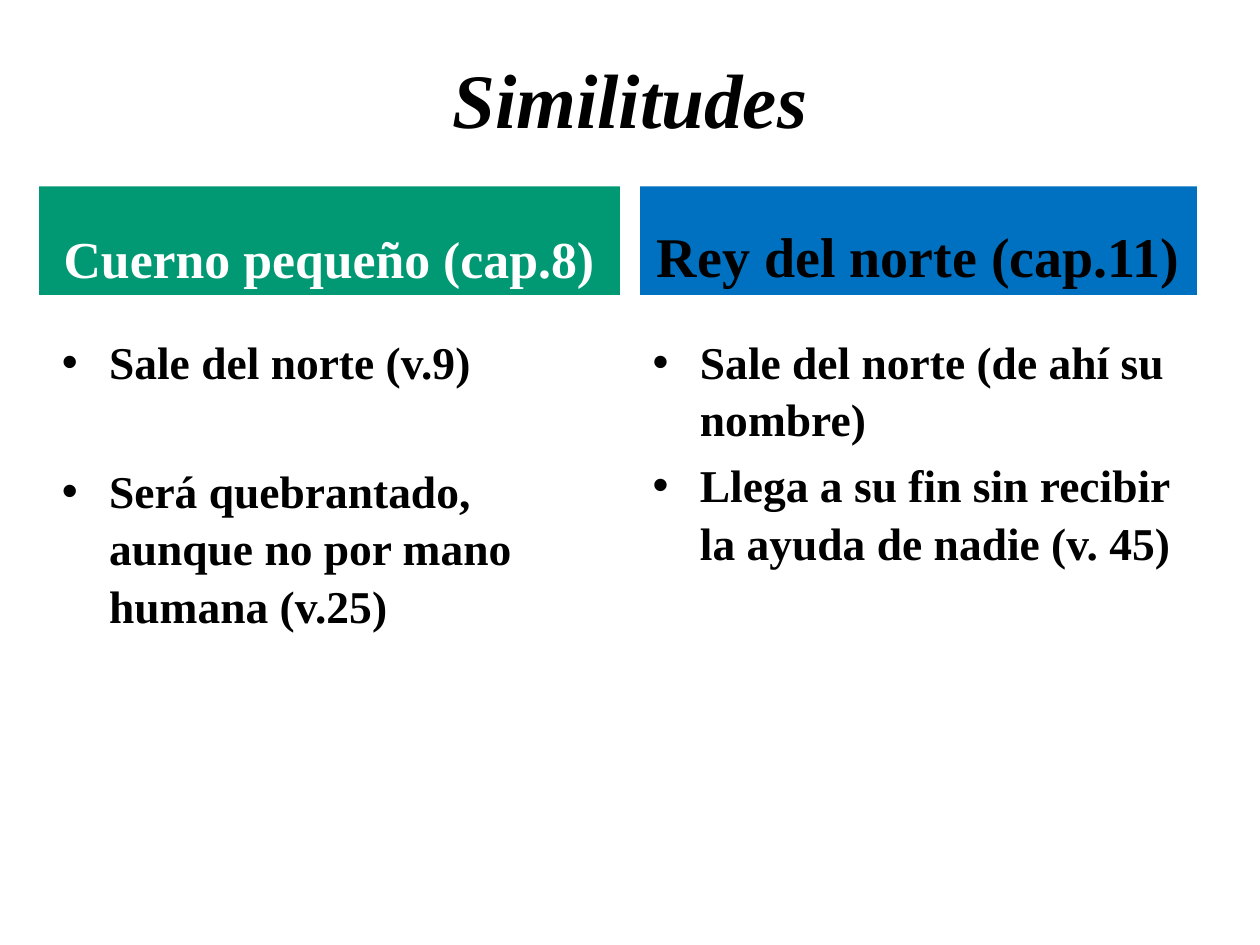
from pptx import Presentation
from pptx.dml.color import RGBColor
from pptx.enum.text import MSO_ANCHOR, MSO_AUTO_SIZE, PP_ALIGN
from pptx.util import Inches, Pt

CENTER, LEFT = PP_ALIGN.CENTER, PP_ALIGN.LEFT
TOP, MIDDLE, BOTTOM = MSO_ANCHOR.TOP, MSO_ANCHOR.MIDDLE, MSO_ANCHOR.BOTTOM
NO_AUTOFIT = MSO_AUTO_SIZE.NONE

FONT = "Times New Roman"
COLORS = {"green": "009973", "blue": "0070C0", "white": "FFFFFF", "black": "000000"}
COMPARISON_LAYOUT = 4
HEADER_TOP, HEADER_HEIGHT = 1.48, 0.86
LIST_TOP, LIST_HEIGHT = 2.58, 4.44


def color(name):
    return RGBColor.from_string(COLORS[name])


def place(box, left, top, width, height, anchor):
    box.left, box.top = Inches(left), Inches(top)
    box.width, box.height = Inches(width), Inches(height)
    frame = box.text_frame
    frame.word_wrap = True
    frame.auto_size = NO_AUTOFIT
    frame.vertical_anchor = anchor
    return frame


def add_span(para, text, size, text_color="black", italic=False):
    span = para.add_run()
    span.text = text
    font = span.font
    font.name, font.size = FONT, Pt(size)
    font.bold, font.italic = True, italic
    font.color.rgb = color(text_color)


def fill_title(box, text):
    para = place(box, 0.5, 0, 9, 1.55, MIDDLE).paragraphs[0]
    para.alignment = CENTER
    add_span(para, text, 44, italic=True)


def fill_header(box, left, width, text, size, fill, text_color):
    frame = place(box, left, HEADER_TOP, width, HEADER_HEIGHT, BOTTOM)
    box.fill.solid()
    box.fill.fore_color.rgb = color(fill)
    para = frame.paragraphs[0]
    para.alignment = CENTER
    add_span(para, text, size, text_color)


def fill_list(box, left, width, items, gap):
    """Write bulleted items, with gap points between them."""
    frame = place(box, left, LIST_TOP, width, LIST_HEIGHT, TOP)
    for index, text in enumerate(items):
        para = frame.add_paragraph() if index else frame.paragraphs[0]
        para.alignment = LEFT
        para.line_spacing = 1.05
        para.space_before = Pt(gap if index else 0)
        add_span(para, text, 26)


def main():
    deck = Presentation()
    deck.slide_width, deck.slide_height = Inches(10), Inches(7.5)
    page = deck.slides.add_slide(deck.slide_layouts[COMPARISON_LAYOUT])
    title, left_header, left_list, right_header, right_list = page.placeholders

    fill_title(title, "Similitudes")
    fill_header(left_header, 0.31, 4.61, "Cuerno pequeño (cap.8)", 29.6, "green", "white")
    fill_list(left_list, 0.39, 4.53, [
        "Sale del norte (v.9)",
        "Será quebrantado, aunque no por mano humana (v.25)",
    ], gap=41)
    fill_header(right_header, 5.08, 4.42, "Rey del norte (cap.11)", 32, "blue", "black")
    fill_list(right_list, 5.08, 4.42, [
        "Sale del norte (de ahí su nombre)",
        "Llega a su fin sin recibir la ayuda de nadie (v. 45)",
    ], gap=5)

    deck.save("out.pptx")


if __name__ == "__main__":
    main()
